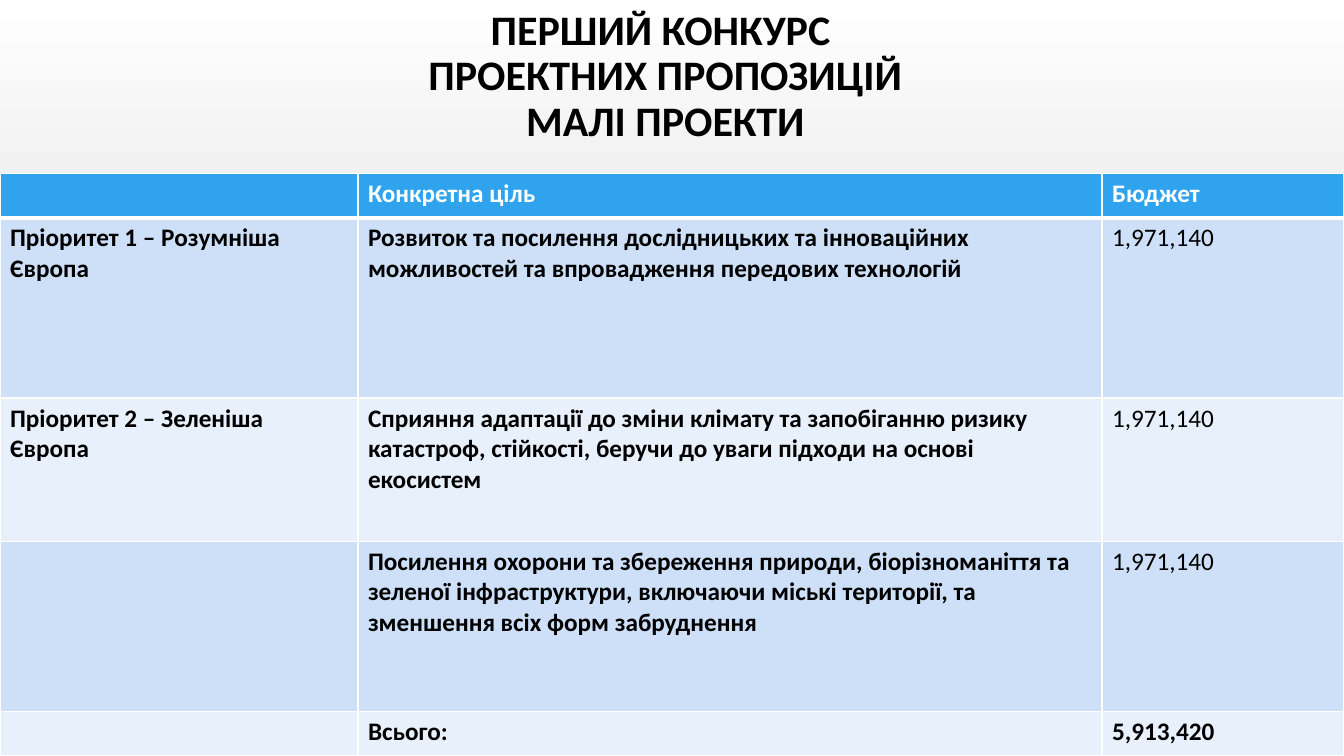
from dataclasses import dataclass

from lxml.etree import SubElement
from pptx import Presentation
from pptx.dml.color import RGBColor
from pptx.enum.text import MSO_ANCHOR as Anchor, PP_ALIGN as Align
from pptx.oxml.ns import qn
from pptx.util import Inches, Pt

WHITE = RGBColor(0xFF, 0xFF, 0xFF)
GREY = RGBColor(0xB9, 0xB9, 0xB9)
BLACK = RGBColor(0, 0, 0)
HEADER_BLUE = RGBColor(0x2F, 0xA3, 0xEE)
BAND_DARK = RGBColor(0xCD, 0xE0, 0xF8)
BAND_LIGHT = RGBColor(0xE8, 0xF0, 0xFC)

WIDTH, HEIGHT = Inches(13.33), Inches(7.5)
COLUMNS = (3.55, 7.38, 2.4)  # relative column widths


@dataclass(frozen=True)
class Area:
    """Place on the slide, in percent of its width and height."""
    left: float
    top: float
    width: float
    height: float

    def lengths(self) -> tuple[int, ...]:
        sides = (WIDTH, HEIGHT, WIDTH, HEIGHT)
        shares = (self.left, self.top, self.width, self.height)
        return tuple(round(side * share / 100) for side, share in zip(sides, shares))


@dataclass(frozen=True)
class BudgetRow:
    height: float  # relative row height
    priority: str
    goal: str
    budget: str
    bold_budget: bool = False


TITLE_AREA = Area(7.13, 0, 84.77, 20.4)
TABLE_AREA = Area(0, 22.93, 100, 77.07)
TITLE_LINES = ("ПЕРШИЙ КОНКУРС ", "ПРОЕКТНИХ ПРОПОЗИЦІЙ", "МАЛІ ПРОЕКТИ")
ROWS = (
    BudgetRow(0.44, "", "Конкретна ціль", "Бюджет", True),
    BudgetRow(1.79, "Пріоритет 1 – Розумніша Європа",
              "Розвиток та посилення дослідницьких та інноваційних можливостей "
              "та впровадження передових технологій", "1,971,140"),
    BudgetRow(1.42, "Пріоритет 2 – Зеленіша Європа",
              "Сприяння адаптації до зміни клімату та запобіганню ризику катастроф, "
              "стійкості, беручи до уваги підходи на основі екосистем", "1,971,140"),
    BudgetRow(1.69, "",
              "Посилення охорони та збереження природи, біорізноманіття та зеленої "
              "інфраструктури, включаючи міські території, та зменшення всіх форм "
              "забруднення", "1,971,140"),
    BudgetRow(0.44, "", "Всього:", "5,913,420", True),
)


def style_font(font, size: float, color: RGBColor, bold: bool) -> None:
    formats = {"name": "Calibri", "size": Pt(size), "bold": bold}
    for name, value in formats.items():
        setattr(font, name, value)
    font.color.rgb = color


def paint_background(s) -> None:
    fill = s.background.fill
    fill.gradient()
    fill.gradient_angle = 270
    for stop, color, position in zip(fill.gradient_stops, (WHITE, GREY), (0, 1)):
        stop.color.rgb = color
        stop.position = position


def add_title(s) -> None:
    tf = s.shapes.add_textbox(*TITLE_AREA.lengths()).text_frame
    tf.word_wrap = True
    tf.vertical_anchor = Anchor.MIDDLE
    p = tf.paragraphs[0]
    p.text = "\v".join(TITLE_LINES)
    p.alignment = Align.CENTER
    p.line_spacing = 0.9
    for r in p.runs:
        style_font(r.font, 30, BLACK, True)


def add_borders(cell, top: float, bottom: float) -> None:
    tc_pr = cell._tc.get_or_add_tcPr()
    for side, points in {"L": 1, "R": 1, "T": top, "B": bottom}.items():
        line = SubElement(tc_pr, qn(f"a:ln{side}"), w=str(Pt(points)))
        solid = SubElement(line, qn("a:solidFill"))
        SubElement(solid, qn("a:srgbClr"), val=str(WHITE))


def add_budget_table(s) -> None:
    left, top, width, height = TABLE_AREA.lengths()
    table = s.shapes.add_table(len(ROWS), len(COLUMNS), left, top, width, height).table
    for column, share in zip(table.columns, COLUMNS):
        column.width = round(width * share / sum(COLUMNS))
    total = sum(row.height for row in ROWS)
    for i, row in enumerate(ROWS):
        table.rows[i].height = round(height * row.height / total)
        header = i == 0
        band = HEADER_BLUE if header else BAND_DARK if i % 2 else BAND_LIGHT
        texts = (row.priority, row.goal, row.budget)
        for cell, text, bold in zip(table.rows[i].cells, texts, (True, True, row.bold_budget)):
            add_borders(cell, top=3 if i == 1 else 1, bottom=3 if header else 1)
            cell.fill.solid()
            cell.fill.fore_color.rgb = band
            p = cell.text_frame.paragraphs[0]
            if text:
                r = p.add_run()
                r.text = text
                style_font(r.font, 18, WHITE if header else BLACK, bold)


def main() -> None:
    prs = Presentation()
    prs.slide_width, prs.slide_height = WIDTH, HEIGHT
    s = prs.slides.add_slide(prs.slide_layouts[6])
    paint_background(s)
    add_title(s)
    add_budget_table(s)
    prs.save("out.pptx")


if __name__ == "__main__":
    main()
